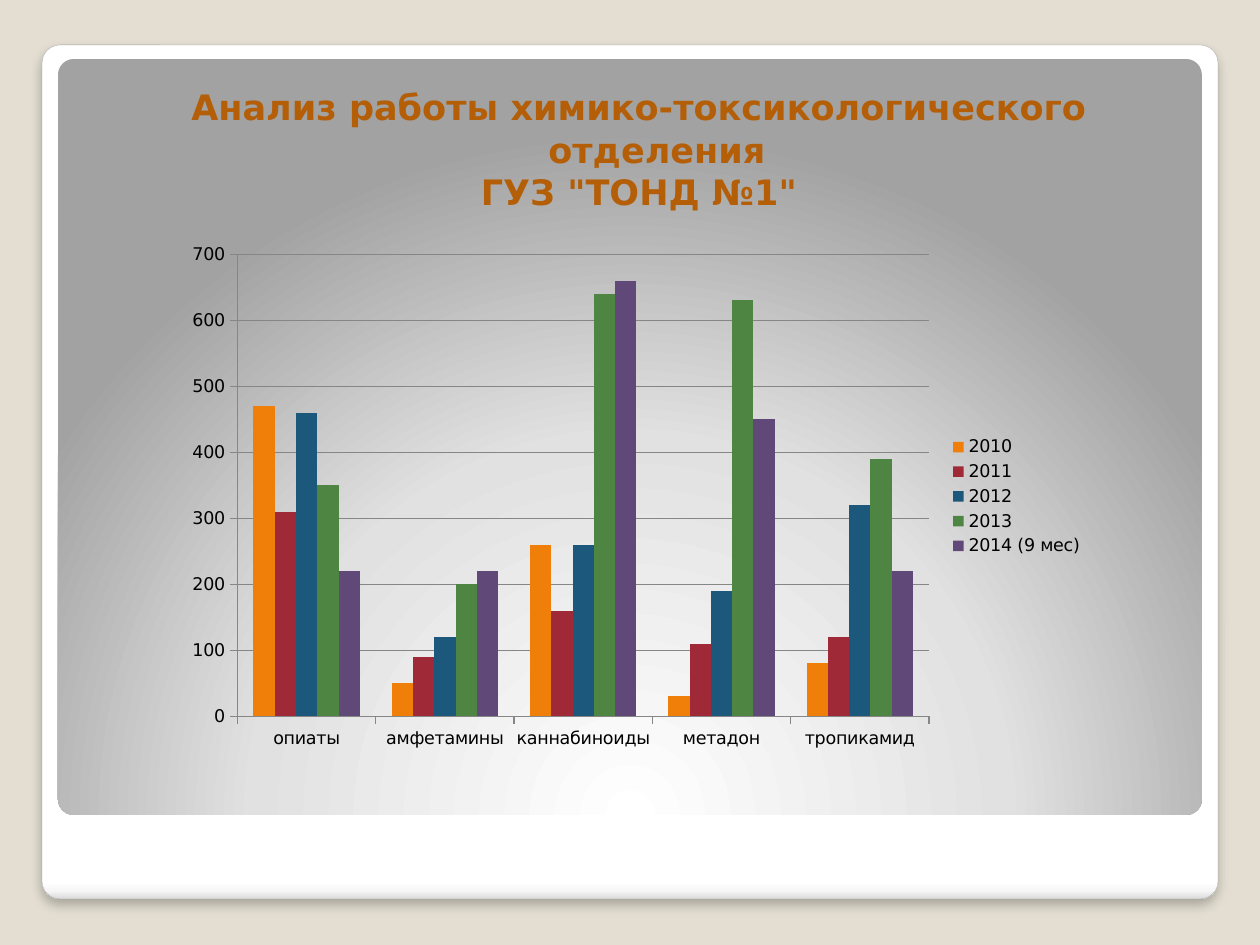
from lxml import etree
from pptx import Presentation
from pptx.chart.data import CategoryChartData
from pptx.dml.color import RGBColor
from pptx.enum.chart import XL_CHART_TYPE, XL_LEGEND_POSITION, XL_TICK_MARK
from pptx.enum.shapes import MSO_SHAPE
from pptx.enum.text import PP_ALIGN
from pptx.oxml import parse_xml
from pptx.oxml.ns import qn
from pptx.util import Emu, Pt

COLUMNS = XL_CHART_TYPE.COLUMN_CLUSTERED
LEGEND_RIGHT = XL_LEGEND_POSITION.RIGHT
TICK_CROSS = XL_TICK_MARK.CROSS
TICK_OUTSIDE = XL_TICK_MARK.OUTSIDE
ROUNDED = MSO_SHAPE.ROUNDED_RECTANGLE
CENTER = PP_ALIGN.CENTER

EMU_PER_PX = 914400 / 126
FONT = "DejaVu Sans"
NAMESPACE = 'xmlns:a="http://schemas.openxmlformats.org/drawingml/2006/main"'

FRAME_STOPS = [(0, "FFFFFF"), (98, "FFFFFF"), (99, "F7F7F7"), (100, "DADADA")]
PANEL_STOPS = [(0, "FFFFFF"), (55, "E1E1E1"), (100, "A2A2A2")]
LINEAR_DOWN = '<a:lin ang="5400000" scaled="0"/>'
GLOW_FROM_BELOW = (
    '<a:path path="circle">'
    '<a:fillToRect l="50000" t="175000" r="50000" b="-75000"/></a:path>'
)
FRAME_SHADOW = (
    f'<a:effectLst {NAMESPACE}>'
    '<a:outerShdw blurRad="76200" dist="50800" dir="5400000" algn="tl" rotWithShape="0">'
    '<a:srgbClr val="000000"><a:alpha val="25000"/></a:srgbClr>'
    '</a:outerShdw></a:effectLst>'
)

HEADING = [
    "Анализ работы химико-токсикологического отделения",
    ' ГУЗ "ТОНД №1" ',
]
SUBSTANCES = ["опиаты", "амфетамины", "каннабиноиды", "метадон", "тропикамид"]
YEARS = [
    ("2010", "F07F09", [470, 50, 260, 30, 80]),
    ("2011", "9F2936", [310, 90, 160, 110, 120]),
    ("2012", "1B587C", [460, 120, 260, 190, 320]),
    ("2013", "4E8542", [350, 200, 640, 630, 390]),
    ("2014 (9 мес)", "604878", [220, 220, 660, 450, 220]),
]


def px(length):
    """Turn pixels into EMU."""
    return Emu(round(length * EMU_PER_PX))


def color(hex_value):
    """Turn a hex string into a colour."""
    return RGBColor.from_string(hex_value)


def add_panel(slide, box, stops, direction):
    """Add a rounded panel with a gradient fill and no outline."""
    shape = slide.shapes.add_shape(ROUNDED, *map(px, box))
    shape.adjustments[0] = 0.021
    shape.shadow.inherit = False
    shape.line.fill.background()
    stop_xml = "".join(
        f'<a:gs pos="{position * 1000}"><a:srgbClr val="{value}"/></a:gs>'
        for position, value in stops
    )
    gradient = parse_xml(
        f'<a:gradFill {NAMESPACE} rotWithShape="1">'
        f'<a:gsLst>{stop_xml}</a:gsLst>{direction}</a:gradFill>'
    )
    shape.element.spPr.find(qn("a:prstGeom")).addnext(gradient)
    return shape


def add_frame(slide, box):
    """Add the white outer frame with its thin outline and shadow."""
    frame = add_panel(slide, box, FRAME_STOPS, LINEAR_DOWN)
    frame.line.color.rgb = color("A4A4A4")
    frame.line.width = Pt(0.16)
    properties = frame.element.spPr
    properties.replace(properties.find(qn("a:effectLst")), etree.fromstring(FRAME_SHADOW))


def add_heading(slide, box):
    """Add the centred heading with hanging indents."""
    text_frame = slide.shapes.add_textbox(*map(px, box)).text_frame
    text_frame.word_wrap = True
    text_frame.margin_left, text_frame.margin_top = px(25), px(13)
    text_frame.margin_right, text_frame.margin_bottom = px(13), px(6)
    text_frame.text = "\n".join(HEADING)
    for paragraph in text_frame.paragraphs:
        paragraph.alignment = CENTER
        properties = paragraph._p.get_or_add_pPr()
        properties.set("marL", str(px(36)))
        properties.set("indent", str(px(-36)))
        font = paragraph.runs[0].font
        font.name, font.size, font.bold = FONT, Pt(20), True
        font.color.rgb = color("B45F07")


def add_results_chart(slide, box):
    """Add the column chart of findings by substance and year."""
    data = CategoryChartData()
    data.categories = SUBSTANCES
    for name, _, values in YEARS:
        data.add_series(name, values)
    chart = slide.shapes.add_chart(COLUMNS, *map(px, box), data).chart
    chart.has_title = False
    chart.font.name, chart.font.size = FONT, Pt(10)
    chart.font.color.rgb = color("000000")
    chart.has_legend = True
    chart.legend.position = LEGEND_RIGHT
    chart.legend.include_in_layout = False

    plot = chart.plots[0]
    plot.vary_by_categories = False
    plot.gap_width, plot.overlap = 150, 0
    for series, (_, fill, _) in zip(plot.series, YEARS):
        series.format.fill.solid()
        series.format.fill.fore_color.rgb = color(fill)

    value_axis = chart.value_axis
    value_axis.minimum_scale, value_axis.maximum_scale = 0, 700
    value_axis.major_unit = 100
    value_axis.has_major_gridlines = True
    for axis in (chart.category_axis, value_axis):
        axis.major_tick_mark = TICK_OUTSIDE
        axis.format.line.color.rgb = color("868686")
    value_axis.major_gridlines.format.line.color.rgb = color("868686")


def main():
    """Build the slide and save it."""
    presentation = Presentation()
    presentation.slide_width, presentation.slide_height = px(1260), px(945)
    slide = presentation.slides.add_slide(presentation.slide_layouts[6])
    slide.background.fill.solid()
    slide.background.fill.fore_color.rgb = color("E3DED1")
    add_frame(slide, (42, 45, 1176, 854))
    add_panel(slide, (58, 59, 1144, 756), PANEL_STOPS, GLOW_FROM_BELOW)
    add_heading(slide, (69, 73, 1128, 756))
    add_results_chart(slide, (174, 234, 922, 525))
    presentation.save("out.pptx")


if __name__ == "__main__":
    main()
